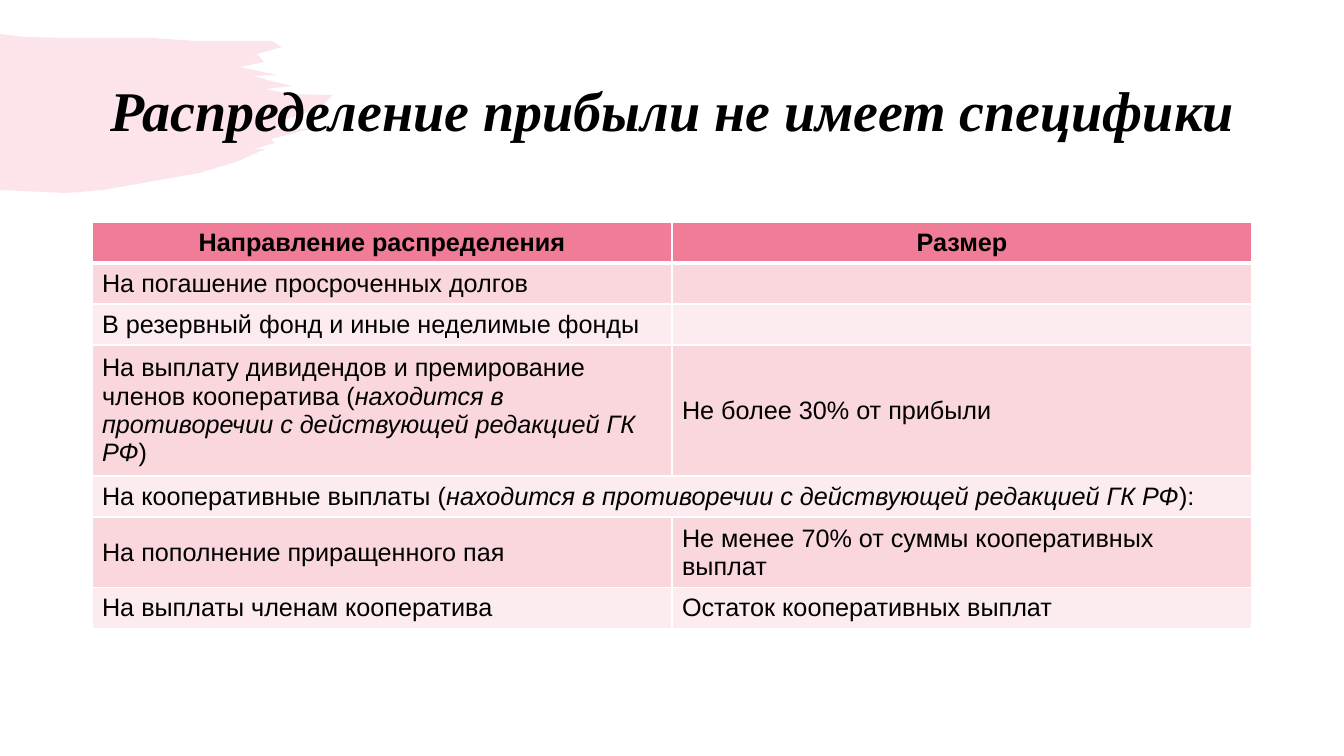
from lxml import etree
from pptx import Presentation
from pptx.dml.color import RGBColor
from pptx.enum.text import MSO_ANCHOR, PP_ALIGN
from pptx.oxml.ns import qn
from pptx.util import Emu, Pt

# Content
TITLE = "Распределение прибыли не имеет специфики"
NOTE = "находится в противоречии с действующей редакцией ГК РФ"
HEADER = ("Направление распределения", "Размер")
# Each cell is a list of runs; odd-numbered runs are italic. None joins the cell to its left.
ROWS = [
    (["На погашение просроченных долгов"], []),
    (["В резервный фонд и иные неделимые фонды"], []),
    (["На выплату дивидендов и премирование членов кооператива (", NOTE, ")"],
     ["Не более 30% от прибыли"]),
    (["На кооперативные выплаты (", NOTE, "):"], None),
    (["На пополнение приращенного пая"], ["Не менее 70% от суммы кооперативных выплат"]),
    (["На выплаты членам кооператива"], ["Остаток кооперативных выплат"]),
]
ROW_LINES = [1, 1, 1, 4, 1, 2, 1]

COLORS = {"pink": "F07C98", "odd": "F9D7DD", "even": "FCECEF",
          "text": "000000", "border": "FFFFFF"}

# Layout in px
SCALE = 914400 / 100.8
SLIDE_W, SLIDE_H = 1344, 756
LEFT, WIDTH = 92, 1160
TITLE_TOP, TITLE_H = 40, 146
TABLE_TOP, ROW_H, LINE_H = 222, 41, 27

# Outline of the brush stroke, clockwise from the top left
BRUSH = [
    (0, 34), (25, 37), (67, 38), (152, 38), (196, 41), (250, 41), (272, 41), (282, 47),
    (257, 54), (264, 62), (240, 67), (277, 75), (253, 76), (275, 82), (292, 86), (265, 89),
    (290, 94), (333, 95), (321, 107), (302, 114), (282, 121), (276, 129), (310, 129),
    (271, 139), (275, 143), (254, 149), (265, 149), (236, 162), (199, 173), (103, 190),
    (66, 193), (0, 190),
]


def px(n):
    return Emu(round(n * SCALE))


def color(name):
    return RGBColor.from_string(COLORS[name])


def add_run(p, text, size, font, bold=False, italic=False):
    r = p.add_run()
    r.text = text
    r.font.name, r.font.size = font, Pt(size)
    r.font.bold, r.font.italic = bold, italic
    r.font.color.rgb = color("text")


def style_cell(cell, fill, bottom=1):
    tc_pr = cell._tc.get_or_add_tcPr()
    for side, width in (("L", 1), ("R", 1), ("T", 1), ("B", bottom)):
        ln = etree.SubElement(tc_pr, qn(f"a:ln{side}"), w=str(Pt(width)))
        solid = etree.SubElement(ln, qn("a:solidFill"))
        etree.SubElement(solid, qn("a:srgbClr"), val=COLORS["border"])
    cell.fill.solid()
    cell.fill.fore_color.rgb = color(fill)
    cell.vertical_anchor = MSO_ANCHOR.MIDDLE


def add_brush(slide):
    builder = slide.shapes.build_freeform(*BRUSH[0], scale=SCALE)
    builder.add_line_segments(BRUSH[1:], close=True)
    sp = builder.convert_to_shape()
    sp.shadow.inherit = False
    sp.line.fill.background()
    sp.fill.solid()
    sp.fill.fore_color.rgb = color("pink")
    rgb = sp._element.spPr.find(".//" + qn("a:srgbClr"))
    etree.SubElement(rgb, qn("a:alpha"), val="20000")


def add_title(slide):
    box = slide.shapes.add_textbox(px(LEFT), px(TITLE_TOP), px(WIDTH), px(TITLE_H))
    tf = box.text_frame
    tf.word_wrap = True
    tf.vertical_anchor = MSO_ANCHOR.MIDDLE
    p = tf.paragraphs[0]
    p.alignment = PP_ALIGN.CENTER
    p.line_spacing = 0.9
    add_run(p, TITLE, 40, "Times New Roman", bold=True, italic=True)


def add_profit_table(slide):
    heights = [ROW_H + (lines - 1) * LINE_H for lines in ROW_LINES]
    table = slide.shapes.add_table(len(heights), len(HEADER), px(LEFT), px(TABLE_TOP),
                                   px(WIDTH), px(sum(heights))).table
    for row, height in zip(table.rows, heights):
        row.height = px(height)
    for c, text in enumerate(HEADER):
        cell = table.cell(0, c)
        style_cell(cell, "pink", bottom=3)
        p = cell.text_frame.paragraphs[0]
        p.alignment = PP_ALIGN.CENTER
        add_run(p, text, 18, "Arial", bold=True)
    for r, row in enumerate(ROWS, 1):
        for c, runs in enumerate(row):
            cell = table.cell(r, c)
            style_cell(cell, "odd" if r % 2 else "even")
            if runs is None:
                table.cell(r, c - 1).merge(cell)
                continue
            for i, text in enumerate(runs):
                add_run(cell.text_frame.paragraphs[0], text, 18, "Arial", italic=i % 2 == 1)


def main():
    prs = Presentation()
    prs.slide_width, prs.slide_height = px(SLIDE_W), px(SLIDE_H)
    slide = prs.slides.add_slide(prs.slide_layouts[6])
    add_brush(slide)
    add_title(slide)
    add_profit_table(slide)
    prs.save("out.pptx")


if __name__ == "__main__":
    main()
